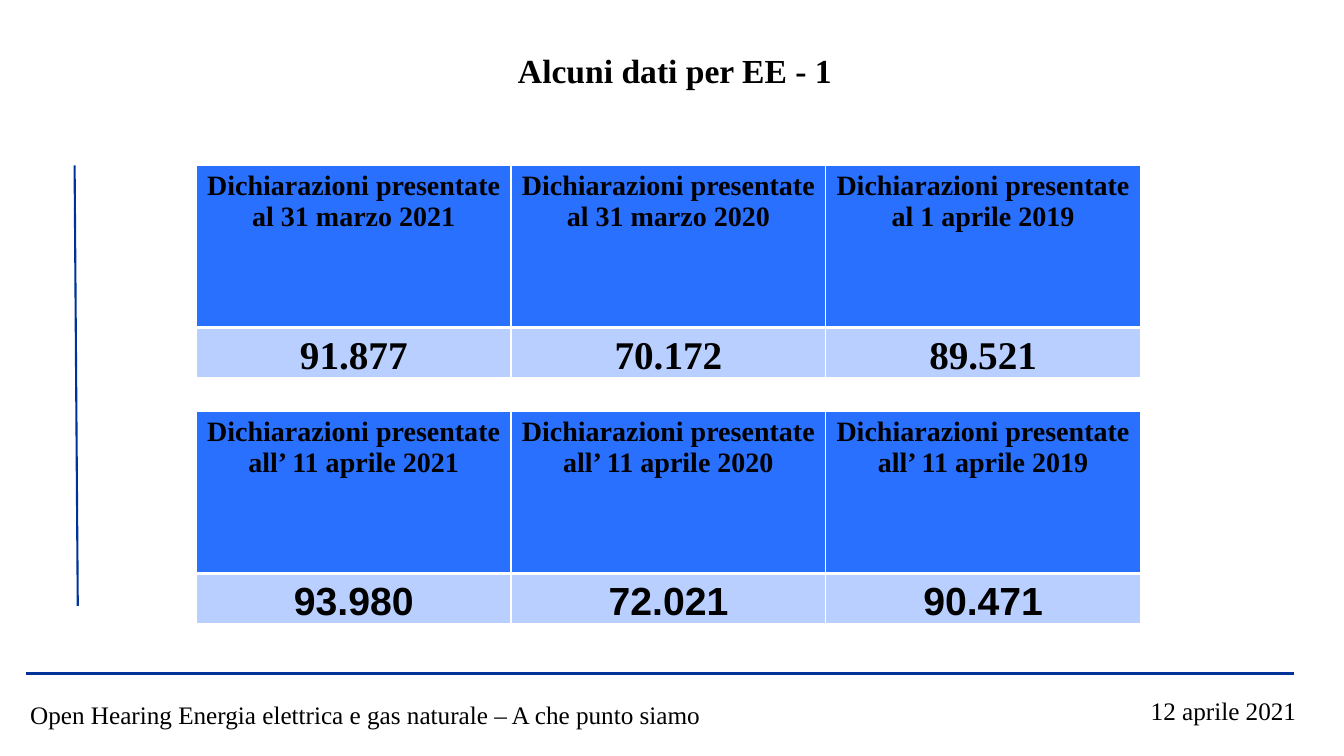
from dataclasses import dataclass

from lxml import etree
from pptx import Presentation
from pptx.dml.color import RGBColor
from pptx.enum.shapes import MSO_CONNECTOR
from pptx.enum.text import MSO_ANCHOR, PP_ALIGN
from pptx.oxml.ns import qn
from pptx.util import Cm, Pt

STRAIGHT = MSO_CONNECTOR.STRAIGHT
LEFT, CENTER = PP_ALIGN.LEFT, PP_ALIGN.CENTER
TOP, BOTTOM = MSO_ANCHOR.TOP, MSO_ANCHOR.BOTTOM
TITLE_ONLY = 5


@dataclass(frozen=True)
class Theme:
    serif: str = "Times New Roman"
    sans: str = "Arial"
    text: str = "000000"
    rule: str = "003399"
    header_fill: str = "2970FF"
    value_fill: str = "B8CFFF"
    border: str = "FFFFFF"
    title_size: int = 24
    header_size: int = 20
    value_size: int = 28
    footer_size: int = 18


THEME = Theme()


@dataclass(frozen=True)
class Rule:
    start: tuple[float, float]
    end: tuple[float, float]
    width: float


@dataclass(frozen=True)
class FooterText:
    text: str
    left: float
    top: float
    width: float


@dataclass(frozen=True)
class Declarations:
    """Declarations filed by a set of dates, with the count for each date."""
    top: float
    dates: tuple[str, ...]
    counts: tuple[str, ...]
    value_font: str


TABLE_LEFT = 4.95
COLUMN_WIDTH = 7.93
HEADER_HEIGHT = 4.08
VALUE_HEIGHT = 1.27
FOOTER_HEIGHT = 1.02

RULES = (
    Rule((0.66, 16.97), (32.61, 16.97), 2.25),
    Rule((1.88, 4.17), (1.96, 15.27), 1.5),
)
FOOTERS = (
    FooterText("Open Hearing Energia elettrica e gas naturale – A che punto siamo",
               0.51, 17.5, 19.33),
    FooterText("12 aprile 2021", 28.75, 17.4, 4.32),
)
TABLES = (
    Declarations(4.17, ("al 31 marzo 2021", "al 31 marzo 2020", "al 1 aprile 2019"),
                 ("91.877", "70.172", "89.521"), THEME.serif),
    Declarations(10.37, tuple(f"all’ 11 aprile {year}" for year in (2021, 2020, 2019)),
                 ("93.980", "72.021", "90.471"), THEME.sans),
)


def write_text(text_frame, text: str, *, size: int, font: str = THEME.serif,
               bold: bool = False, align=LEFT) -> None:
    text_frame.word_wrap = True
    paragraph = text_frame.paragraphs[0]
    paragraph.alignment = align
    run = paragraph.add_run()
    run.text = text
    run.font.size = Pt(size)
    run.font.name = font
    run.font.bold = bold
    run.font.color.rgb = RGBColor.from_string(THEME.text)


def add_title(slide, text: str) -> None:
    title = slide.shapes.title
    title.left, title.top = Cm(5.26), Cm(1.14)
    title.width, title.height = Cm(23.5), Cm(1.27)
    title.text_frame.vertical_anchor = TOP
    write_text(title.text_frame, text, size=THEME.title_size, bold=True, align=CENTER)


def add_rule(slide, rule: Rule) -> None:
    connector = slide.shapes.add_connector(
        STRAIGHT, *map(Cm, rule.start), *map(Cm, rule.end))
    connector.line.color.rgb = RGBColor.from_string(THEME.rule)
    connector.line.width = Pt(rule.width)
    etree.SubElement(connector._element.spPr, qn("a:effectLst"))


def add_footer(slide, footer: FooterText) -> None:
    box = slide.shapes.add_textbox(
        Cm(footer.left), Cm(footer.top), Cm(footer.width), Cm(FOOTER_HEIGHT))
    write_text(box.text_frame, footer.text, size=THEME.footer_size)


def set_borders(cell, bottom_width: float) -> None:
    """Draw the cell's edges; they come before the fill in the XML."""
    properties = cell._tc.get_or_add_tcPr()
    widths = {"a:lnL": 1, "a:lnR": 1, "a:lnT": 1, "a:lnB": bottom_width}
    for position, (tag, width) in enumerate(widths.items()):
        edge = etree.Element(qn(tag), w=str(Pt(width)))
        fill = etree.SubElement(edge, qn("a:solidFill"))
        etree.SubElement(fill, qn("a:srgbClr"), val=THEME.border)
        properties.insert(position, edge)


def format_cell(cell, text: str, *, fill: str, bottom_width: float, size: int,
                font: str = THEME.serif) -> None:
    cell.fill.solid()
    cell.fill.fore_color.rgb = RGBColor.from_string(fill)
    set_borders(cell, bottom_width)
    write_text(cell.text_frame, text, size=size, font=font, bold=True, align=CENTER)


def add_declarations(slide, declarations: Declarations) -> None:
    column_count = len(declarations.dates)
    table = slide.shapes.add_table(
        2, column_count, Cm(TABLE_LEFT), Cm(declarations.top),
        Cm(COLUMN_WIDTH * column_count), Cm(HEADER_HEIGHT + VALUE_HEIGHT)).table
    table.rows[0].height = Cm(HEADER_HEIGHT)
    table.rows[1].height = Cm(VALUE_HEIGHT)
    for index, (date, count) in enumerate(zip(declarations.dates, declarations.counts)):
        table.columns[index].width = Cm(COLUMN_WIDTH)
        format_cell(table.cell(0, index), f"Dichiarazioni presentate {date}",
                    fill=THEME.header_fill, bottom_width=3, size=THEME.header_size)
        value = table.cell(1, index)
        format_cell(value, count, fill=THEME.value_fill, bottom_width=1,
                    size=THEME.value_size, font=declarations.value_font)
        value.vertical_anchor = BOTTOM
        value.margin_left = value.margin_right = value.margin_top = Cm(0.03)
        value.margin_bottom = 0


def main() -> None:
    presentation = Presentation()
    presentation.slide_width, presentation.slide_height = Cm(33.87), Cm(19.05)
    slide = presentation.slides.add_slide(presentation.slide_layouts[TITLE_ONLY])
    add_title(slide, "Alcuni dati per EE - 1")
    for declarations in TABLES:
        add_declarations(slide, declarations)
    for footer in FOOTERS:
        add_footer(slide, footer)
    for rule in RULES:
        add_rule(slide, rule)
    presentation.save("out.pptx")


if __name__ == "__main__":
    main()
